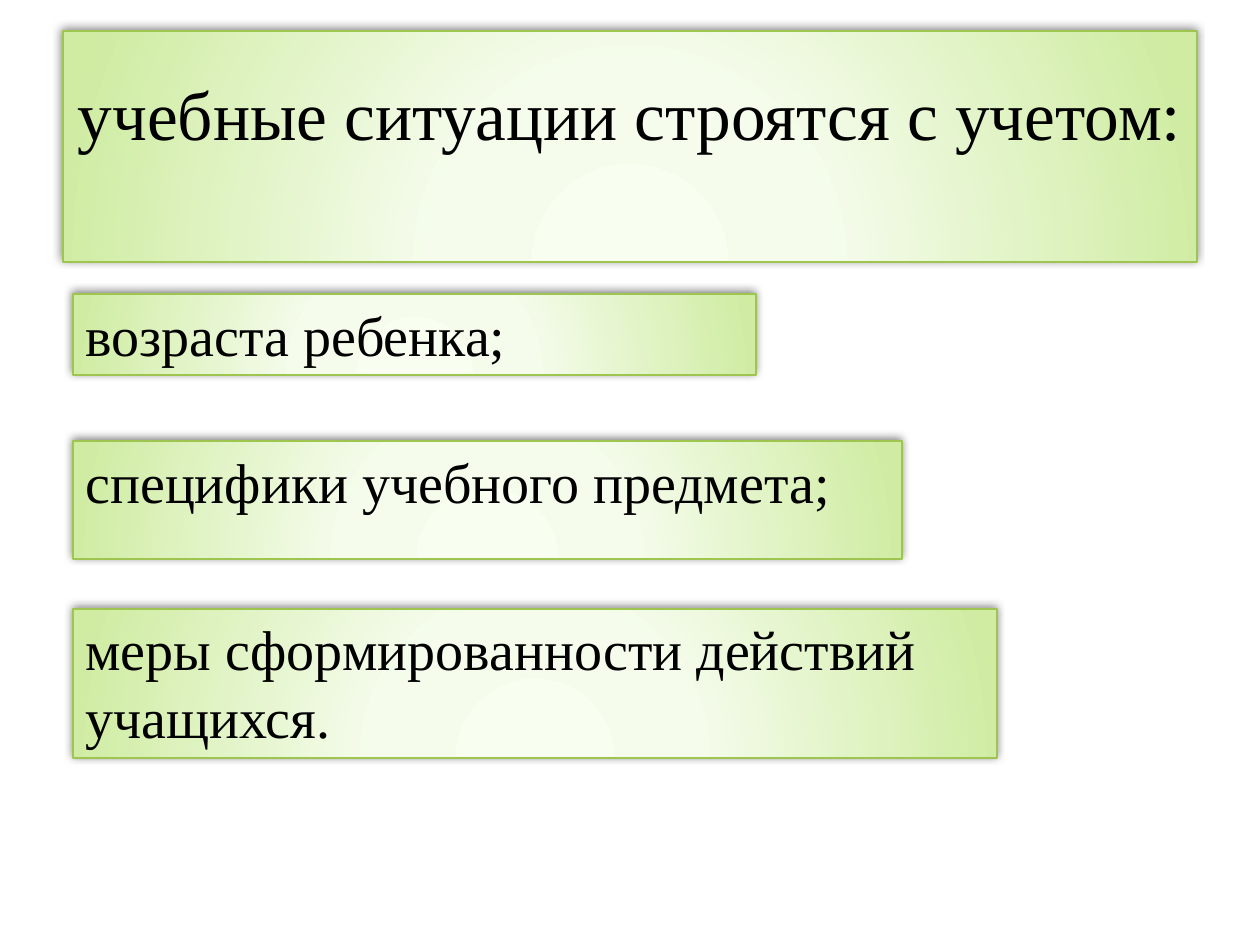
from lxml import etree
from pptx import Presentation
from pptx.dml.color import RGBColor
from pptx.enum.shapes import MSO_SHAPE
from pptx.enum.text import MSO_ANCHOR, PP_ALIGN
from pptx.oxml import parse_xml
from pptx.oxml.ns import qn
from pptx.util import Pt

RECT = MSO_SHAPE.RECTANGLE
TOP = MSO_ANCHOR.TOP
LEFT, MID = PP_ALIGN.LEFT, PP_ALIGN.CENTER
NS = "http://schemas.openxmlformats.org/drawingml/2006/main"
FONT = "Times New Roman"
STOPS = [(0, "F8FEF0"), (34, "F5FCEC"), (100, "CFECA2")]
EDGE, INK = "9EC54F", "000000"


def px(n):
    return round(n * 914400 / 126)


def tint(code):
    return RGBColor.from_string(code)


def glow(shape):
    stops = "".join(
        f'<a:gs pos="{pos * 1000}"><a:srgbClr val="{tint(code)}"/></a:gs>'
        for pos, code in STOPS
    )
    fill = parse_xml(
        f'<a:gradFill xmlns:a="{NS}" rotWithShape="1"><a:gsLst>{stops}</a:gsLst>'
        '<a:path path="circle"><a:fillToRect l="50000" t="155000" '
        'r="50000" b="-55000"/></a:path></a:gradFill>'
    )
    shape._element.spPr.find(qn("a:prstGeom")).addnext(fill)


def shade(shape):
    shape.shadow.inherit = False
    group = shape._element.spPr.find(qn("a:effectLst"))
    drop = etree.SubElement(
        group, qn("a:outerShdw"), blurRad=str(Pt(5)), dist=str(Pt(2)),
        dir=str(245 * 60000), algn="tl", rotWithShape="0",
    )
    hue = etree.SubElement(drop, qn("a:srgbClr"), val=str(tint(INK)))
    etree.SubElement(hue, qn("a:alpha"), val="50000")


def write(shape, text, size=32, align=LEFT, inset=6):
    frame = shape.text_frame
    frame.word_wrap = True
    frame.vertical_anchor = TOP
    frame.margin_top = px(inset)
    para = frame.paragraphs[0]
    para.alignment = align
    run = para.add_run()
    run.text = text
    run.font.name = FONT
    run.font.size = Pt(size)
    run.font.color.rgb = tint(INK)


def panel(slide, box, text, **style):
    shape = slide.shapes.add_shape(RECT, *map(px, box))
    shape.line.color.rgb = tint(EDGE)
    shape.line.width = Pt(0.75)
    glow(shape)
    shade(shape)
    write(shape, text, **style)


def title(slide, box):
    panel(slide, box, "учебные ситуации строятся с учетом:",
          size=39.6, align=MID, inset=40)


def points(slide, left, top):
    rows = [
        (0, 683, 81, "возраста ребенка;"),
        (147, 829, 118, "специфики учебного предмета;"),
        (315, 924, 149, "меры сформированности действий учащихся."),
    ]
    for drop, wide, high, text in rows:
        panel(slide, (left, top + drop, wide, high), text)


def main():
    deck = Presentation()
    deck.slide_width, deck.slide_height = px(1260), px(945)
    slide = deck.slides.add_slide(deck.slide_layouts[6])
    title(slide, (63, 31, 1134, 231))
    points(slide, 73, 294)
    deck.save("out.pptx")


if __name__ == "__main__":
    main()
